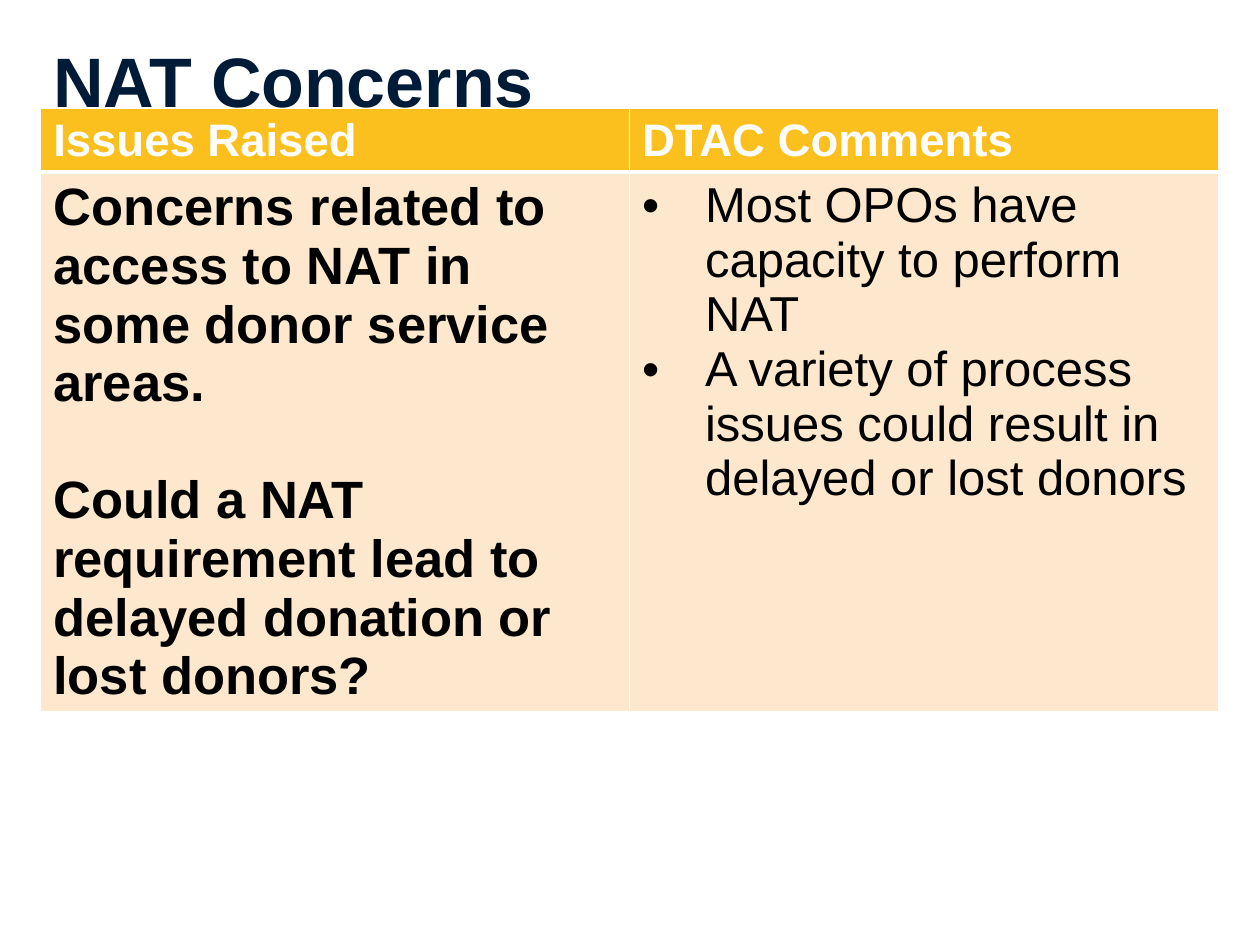
from dataclasses import dataclass

from lxml.etree import SubElement
from pptx import Presentation
from pptx.dml.color import RGBColor
from pptx.enum.text import MSO_ANCHOR, PP_ALIGN
from pptx.oxml.ns import qn
from pptx.util import Cm, Pt

COLORS = {
    "navy": "001B37",
    "gold": "FBC01E",
    "cream": "FDE8CD",
    "white": "FFFFFF",
    "black": "000000",
}
FONT = "Arial"


@dataclass
class Entry:
    lines: list[str]
    size: int
    fill: str
    ink: str
    bold: bool = True
    bullet: bool = False
    gap: float = 0


ROWS = [
    [
        Entry(["Issues Raised"], 26, "gold", "white"),
        Entry(["DTAC Comments"], 26, "gold", "white"),
    ],
    [
        Entry(["Concerns related to access to NAT in some donor service areas.",
               "Could a NAT requirement lead to delayed donation or lost donors?"],
              30, "cream", "black", gap=33.5),
        Entry(["Most OPOs have capacity to perform NAT",
               "A variety of process issues could result in delayed or lost donors"],
              28, "cream", "black", bold=False, bullet=True),
    ],
]
HEIGHTS = [Cm(1.25), Cm(10.85)]
EDGES = [
    {"L": 1, "R": 1, "T": 1, "B": 3},
    {"L": 1, "R": 1, "T": 3, "B": 1},
]


def style(para, size: int, ink: str, bold: bool) -> None:
    for run in para.runs:
        run.font.name = FONT
        run.font.size = Pt(size)
        run.font.bold = bold
        run.font.color.rgb = RGBColor.from_string(COLORS[ink])


def add_bullet(para) -> None:
    props = para._p.get_or_add_pPr()
    props.set("marL", str(Cm(1.27)))
    props.set("indent", str(-Cm(1.27)))
    SubElement(props, qn("a:buFont"), typeface=FONT)
    SubElement(props, qn("a:buChar"), char="•")


def add_edges(cell, edges: dict[str, int]) -> None:
    props = cell._tc.get_or_add_tcPr()
    for side, width in edges.items():
        line = SubElement(props, qn(f"a:ln{side}"), w=str(Pt(width)))
        fill = SubElement(line, qn("a:solidFill"))
        SubElement(fill, qn("a:srgbClr"), val=COLORS["white"])


def fill_cell(cell, entry: Entry, edges: dict[str, int]) -> None:
    add_edges(cell, edges)
    cell.fill.solid()
    cell.fill.fore_color.rgb = RGBColor.from_string(COLORS[entry.fill])
    cell.text_frame.text = "\n".join(entry.lines)
    for i, para in enumerate(cell.text_frame.paragraphs):
        if i and entry.gap:
            para.space_before = Pt(entry.gap)
        if entry.bullet:
            add_bullet(para)
        style(para, entry.size, entry.ink, entry.bold)


def main() -> None:
    deck = Presentation()
    deck.slide_width, deck.slide_height = Cm(25.4), Cm(19.05)
    slide = deck.slides.add_slide(deck.slide_layouts[5])

    # Title
    title = slide.shapes.title
    title.left, title.top = Cm(0.82), Cm(0.43)
    title.width, title.height = Cm(24.28), Cm(2.36)
    frame = title.text_frame
    frame.text = "NAT Concerns"
    frame.vertical_anchor = MSO_ANCHOR.MIDDLE
    frame.paragraphs[0].alignment = PP_ALIGN.LEFT
    style(frame.paragraphs[0], 40, "navy", True)

    # Table of issues and comments, behind the title
    holder = slide.shapes.add_table(
        len(ROWS), len(ROWS[0]), Cm(0.82), Cm(2.19), Cm(23.74), sum(HEIGHTS))
    title._element.addprevious(holder._element)
    table = holder.table
    for r, row in enumerate(ROWS):
        table.rows[r].height = HEIGHTS[r]
        for c, entry in enumerate(row):
            fill_cell(table.cell(r, c), entry, EDGES[r])

    deck.save("out.pptx")


if __name__ == "__main__":
    main()
